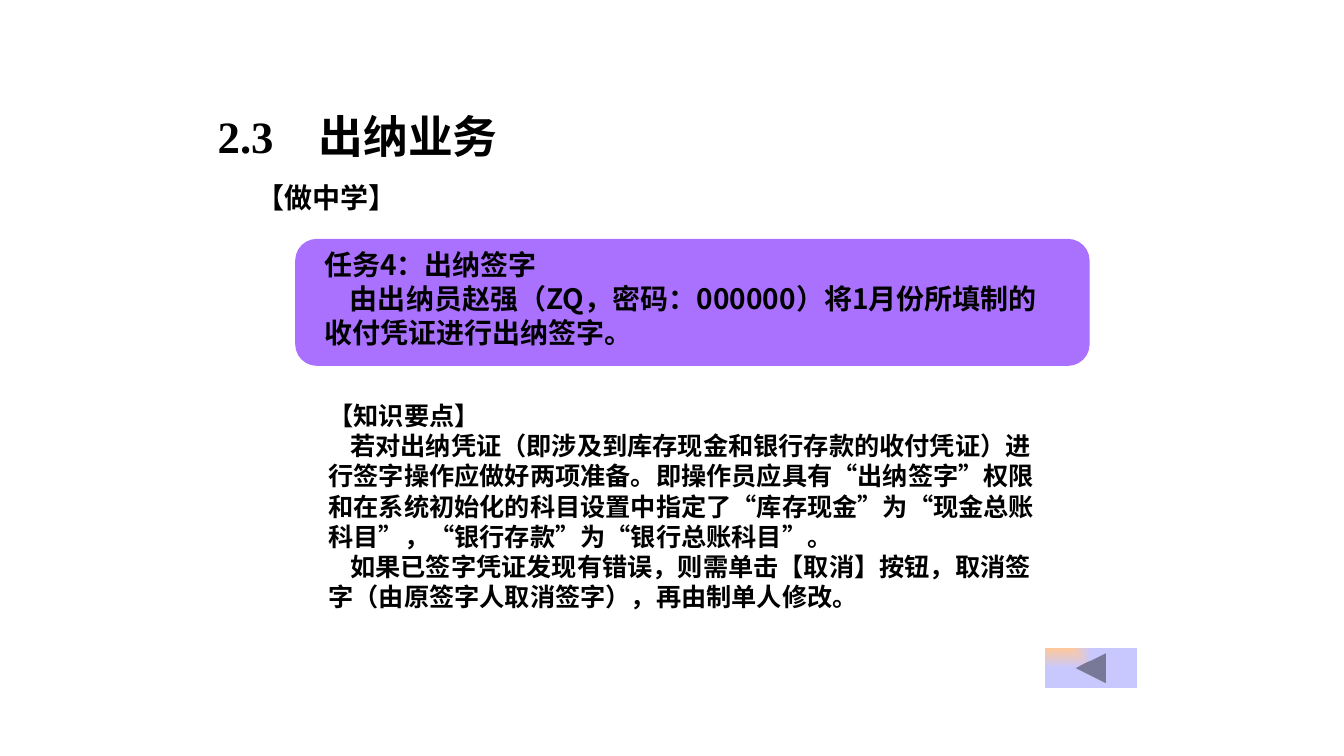
from dataclasses import dataclass

from lxml import etree
from pptx import Presentation
from pptx import util as u
from pptx.dml.color import RGBColor
from pptx.enum import shapes, text
from pptx.oxml import ns


@dataclass(frozen=True)
class Theme:
    ink: RGBColor = RGBColor(0x00, 0x00, 0x00)
    panel: RGBColor = RGBColor(0xAA, 0x71, 0xFF)
    glow: RGBColor = RGBColor(0xFF, 0xC8, 0x9B)
    button: RGBColor = RGBColor(0xC8, 0xC8, 0xFF)
    serif: str = "Times New Roman"
    sans: str = "Noto Sans CJK SC"
    title: int = 32
    task: int = 20
    notes: int = 18


theme = Theme()


def add_span(para, words, size, font):
    span = para.add_run()
    span.text = words
    span.font.size = u.Pt(size)
    span.font.bold = True
    span.font.name = font
    span.font.color.rgb = theme.ink
    east_asian = etree.SubElement(span.font._element, ns.qn("a:ea"))
    east_asian.set("typeface", theme.sans)


def set_indent(para, first_line):
    props = para._p.get_or_add_pPr()
    props.set("marL", "0")
    props.set("indent", str(u.Cm(first_line)))
    return props


deck = Presentation()
deck.slide_width, deck.slide_height = u.Cm(33.87), u.Cm(19.05)
page = deck.slides.add_slide(deck.slide_layouts[5])

# Back button with a glow from its top left corner
button = page.shapes.add_shape(
    shapes.MSO_SHAPE.ACTION_BUTTON_BACK_OR_PREVIOUS,
    u.Cm(26.34), u.Cm(16.33), u.Cm(2.31), u.Cm(1.02))
button.fill.gradient()
for stop, color in zip(button.fill.gradient_stops, (theme.glow, theme.button)):
    stop.color.rgb = color
gradient = button._element.spPr.find(ns.qn("a:gradFill"))
gradient.remove(gradient.find(ns.qn("a:lin")))
shade = etree.SubElement(gradient, ns.qn("a:path"), {"path": "rect"})
etree.SubElement(shade, ns.qn("a:fillToRect"), {"r": "100000", "b": "100000"})

# Task panel
panel = page.shapes.add_shape(
    shapes.MSO_SHAPE.ROUNDED_RECTANGLE,
    u.Cm(7.44), u.Cm(6.02), u.Cm(20.02), u.Cm(3.2))
panel.adjustments[0] = 0.17
panel.fill.solid()
panel.fill.fore_color.rgb = theme.panel

for shape in (button, panel):
    shape.line.fill.background()
    shape.shadow.inherit = False

# Title, with a tab between number and name
title = page.shapes.title
title.left, title.top, title.width, title.height = (
    u.Cm(5.23), u.Cm(2.62), u.Cm(22.61), u.Cm(1.63))
title.text_frame.vertical_anchor = text.MSO_ANCHOR.TOP
title.text_frame.auto_size = text.MSO_AUTO_SIZE.SHAPE_TO_FIT_TEXT
para = title.text_frame.paragraphs[0]
para.alignment = text.PP_ALIGN.LEFT
tabs = etree.SubElement(set_indent(para, 0), ns.qn("a:tabLst"))
etree.SubElement(tabs, ns.qn("a:tab"), {"pos": str(u.Cm(2.24)), "algn": "l"})
add_span(para, "2.3\t出纳业务", theme.title, theme.serif)

# Text boxes: place, wrap, anchor, size, then paragraphs as (first-line indent, font, words);
# a bar in the words switches to the serif font and back
middle, top = text.MSO_ANCHOR.MIDDLE, text.MSO_ANCHOR.TOP
boxes = [
    ((8.03, 9.93, 18.59, 5.64), True, middle, theme.notes, [
        (0, theme.serif, "【知识要点】"),
        (0.55, theme.sans,
         "若对出纳凭证（即涉及到库存现金和银行存款的收付凭证）进行签字操作应做好两项准备。"
         "即操作员应具有|“|出纳签字|”|权限和在系统初始化的科目设置中指定了"
         "|“|库存现金|”|为|“|现金总账科目|”|，|“|银行存款|”|为|“|银行总账科目|”|。"),
        (0.55, theme.sans,
         "如果已签字凭证发现有错误，则需单击【取消】按钮，取消签字（由原签字人取消签字），"
         "再由制单人修改。"),
    ]),
    ((6.22, 4.42, 4.06, 1.12), False, middle, theme.task, [
        (0, theme.serif, "【做中学】"),
    ]),
    ((7.92, 6.12, 18.9, 2.82), True, top, theme.task, [
        (0, theme.sans, "任务4：出纳签字"),
        (0.65, theme.sans,
         "由出纳员赵强（ZQ，密码：000000）将1月份所填制的收付凭证进行出纳签字。"),
    ]),
]
for place, wrap, anchor, size, paragraphs in boxes:
    box = page.shapes.add_textbox(*map(u.Cm, place))
    frame = box.text_frame
    frame.word_wrap = wrap
    frame.vertical_anchor = anchor
    frame.auto_size = text.MSO_AUTO_SIZE.SHAPE_TO_FIT_TEXT
    for row, (first_line, font, words) in enumerate(paragraphs):
        para = frame.add_paragraph() if row else frame.paragraphs[0]
        set_indent(para, first_line)
        for part, piece in enumerate(words.split("|")):
            add_span(para, piece, size, theme.serif if part % 2 else font)

deck.save("out.pptx")
